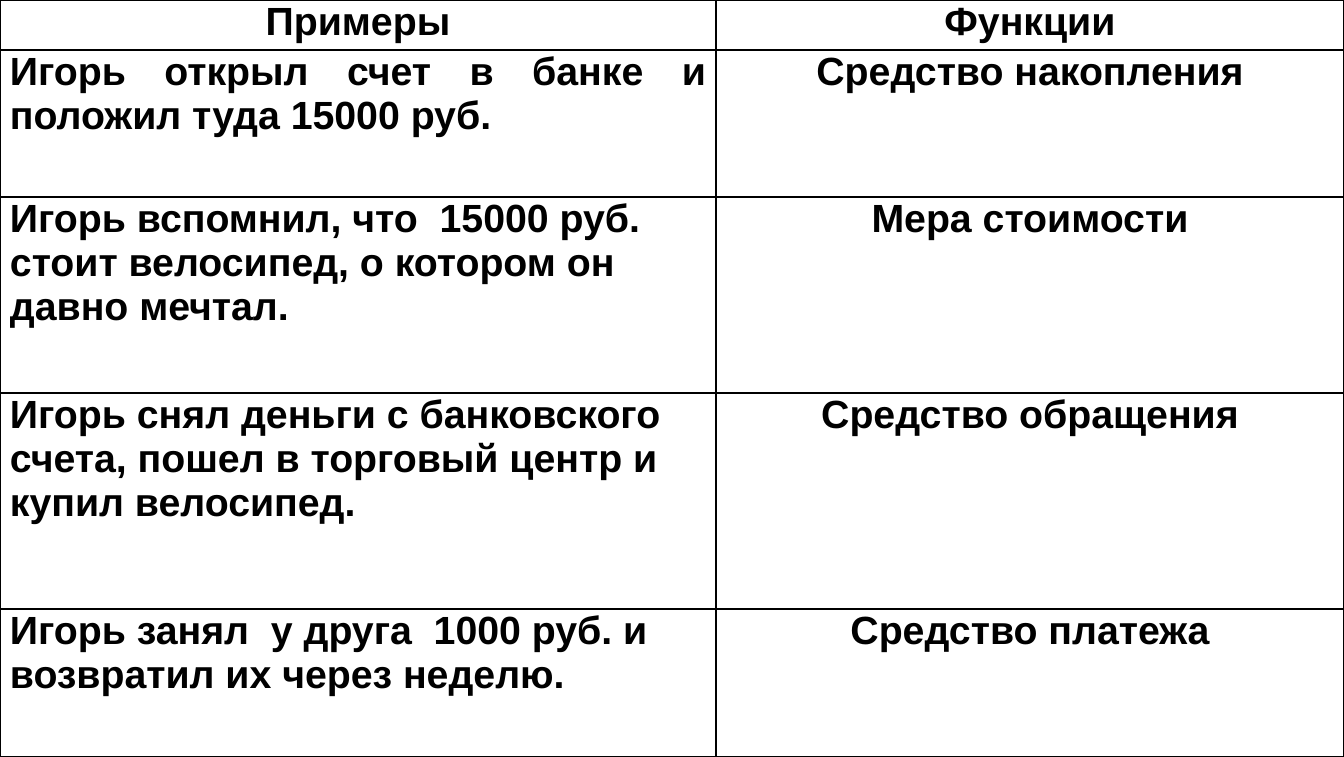
from lxml import etree
from pptx import Presentation, util as u
from pptx.dml import color
from pptx.enum import text
from pptx.oxml import ns

SCALE = 914400 / 101
MID = text.PP_ALIGN.CENTER
LEFT = text.PP_ALIGN.LEFT
JUST = text.PP_ALIGN.JUSTIFY


def px(n):
    return u.Emu(round(n * SCALE))


def tint(code):
    return color.RGBColor.from_string(code)


class Deck:
    """Hold the style and the current slide."""

    font, size, ink, paper, ground = "Arial", 28, "000000", "FFFFFF", "EEECE1"

    def __init__(self, wide, high):
        self.prs = Presentation()
        self.prs.slide_width, self.prs.slide_height = px(wide), px(high)
        self.slide = self.prs.slides.add_slide(self.prs.slide_layouts[6])
        back = self.slide.background.fill
        back.solid()
        back.fore_color.rgb = tint(self.ground)

    def edge(self, cell):
        props = cell._tc.get_or_add_tcPr()
        for side in ("lnL", "lnR", "lnT", "lnB"):
            line = etree.SubElement(props, ns.qn("a:" + side), w=str(u.Pt(1)))
            fill = etree.SubElement(line, ns.qn("a:solidFill"))
            etree.SubElement(fill, ns.qn("a:srgbClr"), val=self.ink)

    def cell(self, cell, words, align):
        self.edge(cell)
        cell.fill.solid()
        cell.fill.fore_color.rgb = tint(self.paper)
        cell.margin_left = cell.margin_right = px(10)
        cell.margin_top = cell.margin_bottom = 0
        para = cell.text_frame.paragraphs[0]
        para.alignment = align
        para.space_after = u.Pt(6)
        run = para.add_run()
        run.text = words
        run.font.name, run.font.size, run.font.bold = self.font, u.Pt(self.size), True
        run.font.color.rgb = tint(self.ink)

    def table(self, cols, rows, data):
        frame = self.slide.shapes.add_table(
            len(rows), len(cols), 0, 0, px(sum(cols)), px(sum(rows)))
        grid = frame.table
        for col, wide in zip(grid.columns, cols):
            col.width = px(wide)
        for row, high, (case, role, align) in zip(grid.rows, rows, data):
            row.height = px(high)
            self.cell(row.cells[0], case, align)
            self.cell(row.cells[1], role, MID)


def main():
    deck = Deck(1344, 757)
    deck.table([716, 628], [50, 147, 196, 216, 148], [
        ("Примеры", "Функции", MID),
        ("Игорь открыл счет в банке и положил туда 15000 руб.",
         "Средство накопления", JUST),
        ("Игорь вспомнил, что  15000 руб. стоит велосипед, о котором он давно мечтал.",
         "Мера стоимости", LEFT),
        ("Игорь снял деньги с банковского счета, пошел в торговый центр и купил велосипед.",
         "Средство обращения", LEFT),
        ("Игорь занял  у друга  1000 руб. и возвратил их через неделю.",
         "Средство платежа", LEFT),
    ])
    deck.prs.save("out.pptx")


if __name__ == "__main__":
    main()
